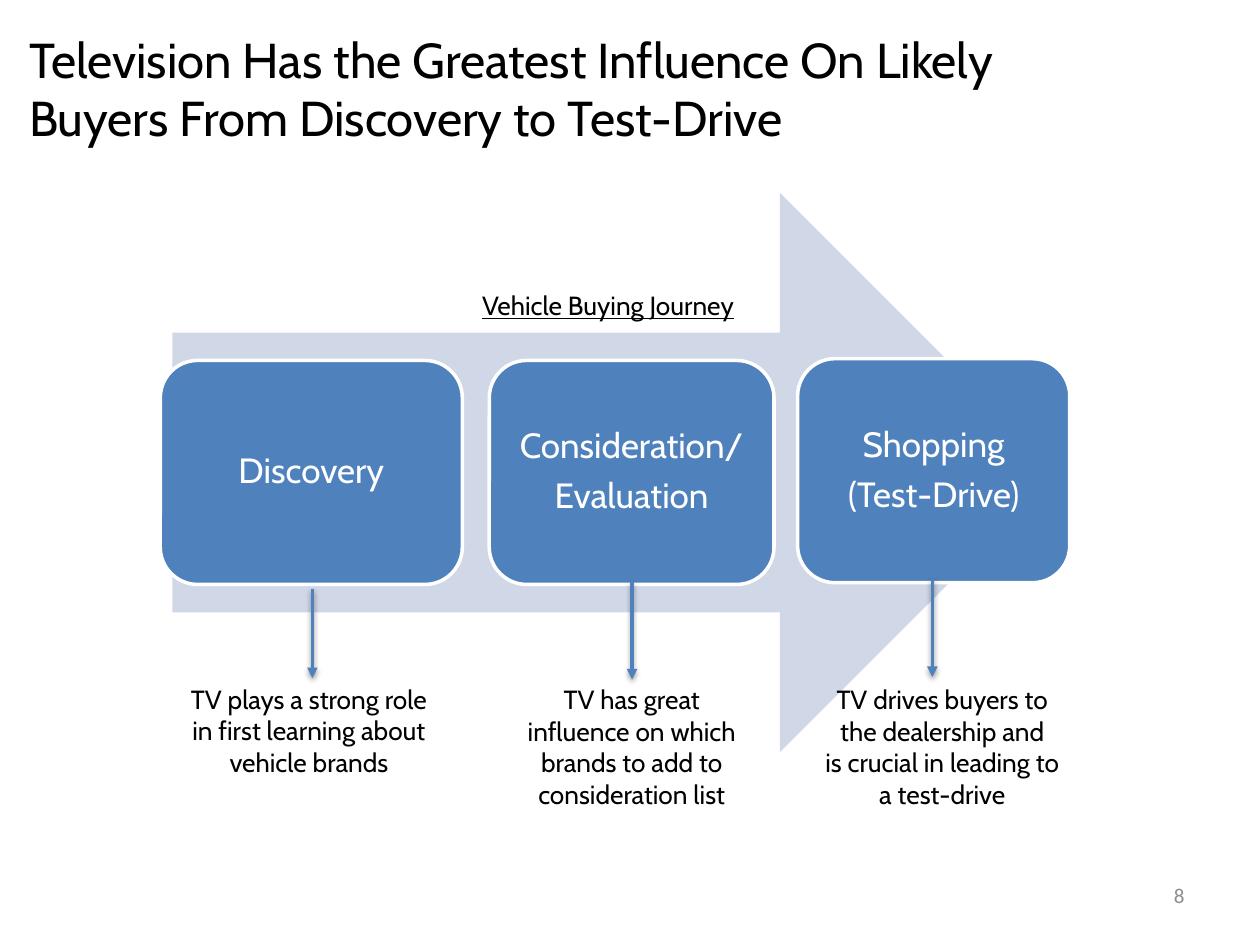
"""Build the vehicle buying journey slide."""
from lxml import etree
from pptx import Presentation
from pptx.dml.color import RGBColor
from pptx.enum.shapes import MSO_CONNECTOR, MSO_SHAPE
from pptx.enum.text import MSO_ANCHOR, PP_ALIGN
from pptx.oxml import parse_xml
from pptx.oxml.ns import nsdecls, qn
from pptx.util import Pt

ARROW, CARD = MSO_SHAPE.RIGHT_ARROW, MSO_SHAPE.ROUNDED_RECTANGLE
STRAIGHT = MSO_CONNECTOR.STRAIGHT
TOP, MIDDLE = MSO_ANCHOR.TOP, MSO_ANCHOR.MIDDLE
LEFT, CENTER, RIGHT = PP_ALIGN.LEFT, PP_ALIGN.CENTER, PP_ALIGN.RIGHT

COLORS = {"text": "000000", "white": "FFFFFF", "stage": "4F81BD",
          "journey": "D0D8E8", "number": "8C8C8C"}
SHADOW = (f'<a:effectLst {nsdecls("a")}><a:outerShdw blurRad="39370" dist="20320" '
          'dir="5400000" rotWithShape="0"><a:srgbClr val="000000">'
          '<a:alpha val="38000"/></a:srgbClr></a:outerShdw></a:effectLst>')


def color(name):
    return RGBColor.from_string(COLORS[name])


def write(shape, lines, size, ink="text", align=CENTER, anchor=TOP, wrap=True,
          font="Cabin", underline=None, spacing=None):
    frame = shape.text_frame
    frame.text = "\n".join(lines)
    frame.word_wrap, frame.vertical_anchor = wrap, anchor
    for paragraph in frame.paragraphs:
        for name, value in (spacing or {}).items():
            setattr(paragraph, name, value)
        paragraph.alignment = align
        style = {"name": font, "size": Pt(size), "underline": underline}
        for run in paragraph.runs:
            for name, value in style.items():
                setattr(run.font, name, value)
            run.font.color.rgb = color(ink)


prs = Presentation()
prs.slide_width, prs.slide_height = Pt(720), Pt(540)
slide = prs.slides.add_slide(prs.slide_layouts[5])
shapes = slide.shapes

title = shapes.title
title_place = {"left": 9.4, "top": 13, "width": 627, "height": 90}
for name, value in title_place.items():
    setattr(title, name, Pt(value))
write(title, ["Television Has the Greatest Influence On Likely Buyers "
              "From Discovery to Test-Drive"], 28, align=LEFT)

journey = shapes.add_shape(ARROW, Pt(98.5), Pt(110.2), Pt(507), Pt(319.7))
journey.shadow.inherit = False
journey.fill.solid()
journey.fill.fore_color.rgb = color("journey")
journey.line.fill.background()

stages = [
    (["Discovery"], (91.6, 206, 172.6),
     ["TV plays a strong role", "in first learning about", "vehicle brands"],
     (93, 386.8, 167, 62), False, (178.5, 336.5, 387.5)),
    (["Consideration/", "Evaluation"], (279.6, 206, 162.7),
     ["TV has great", "influence on which brands to add to consideration list"],
     (279.6, 387, 162.7, 80), True, (361.2, 332.5, 388.3)),
    (["Shopping", "(Test-Drive)"], (455.8, 205, 155.5),
     ["TV drives buyers to the dealership and", "is crucial in leading to a test-drive"],
     (461.4, 387, 154, 80), True, (532.8, 330.7, 386.9)),
]
margins = ("margin_left", "margin_top", "margin_right", "margin_bottom")

for stage_name, (left, top, width), influence, place, wrap, _ in stages:
    stage = shapes.add_shape(CARD, Pt(left), Pt(top), Pt(width), Pt(128))
    stage.shadow.inherit = False
    stage.fill.solid()
    stage.fill.fore_color.rgb = color("stage")
    stage.line.color.rgb = color("white")
    stage.line.width = Pt(2)
    for margin in margins:
        setattr(stage.text_frame, margin, Pt(6))
    write(stage, stage_name, 20, "white", anchor=MIDDLE,
          spacing={"line_spacing": 0.9, "space_after": Pt(7)})
    write(shapes.add_textbox(*map(Pt, place)), influence, 15, wrap=wrap)

for *_, (x, start, end) in stages:
    link = shapes.add_connector(STRAIGHT, Pt(x), Pt(start), Pt(x), Pt(end))
    link.line.color.rgb = color("stage")
    link.line.width = Pt(2)
    etree.SubElement(link.line._get_or_add_ln(), qn("a:tailEnd"), type="triangle")
    link._element.spPr.append(parse_xml(SHADOW))

write(shapes.add_textbox(Pt(95), Pt(162), Pt(505), Pt(25.4)),
      ["Vehicle Buying Journey"], 15, underline=True)
write(shapes.add_textbox(Pt(516), Pt(500.5), Pt(168), Pt(28.8)),
      ["8"], 12, "number", align=RIGHT, font="Calibri")

prs.save("out.pptx")
